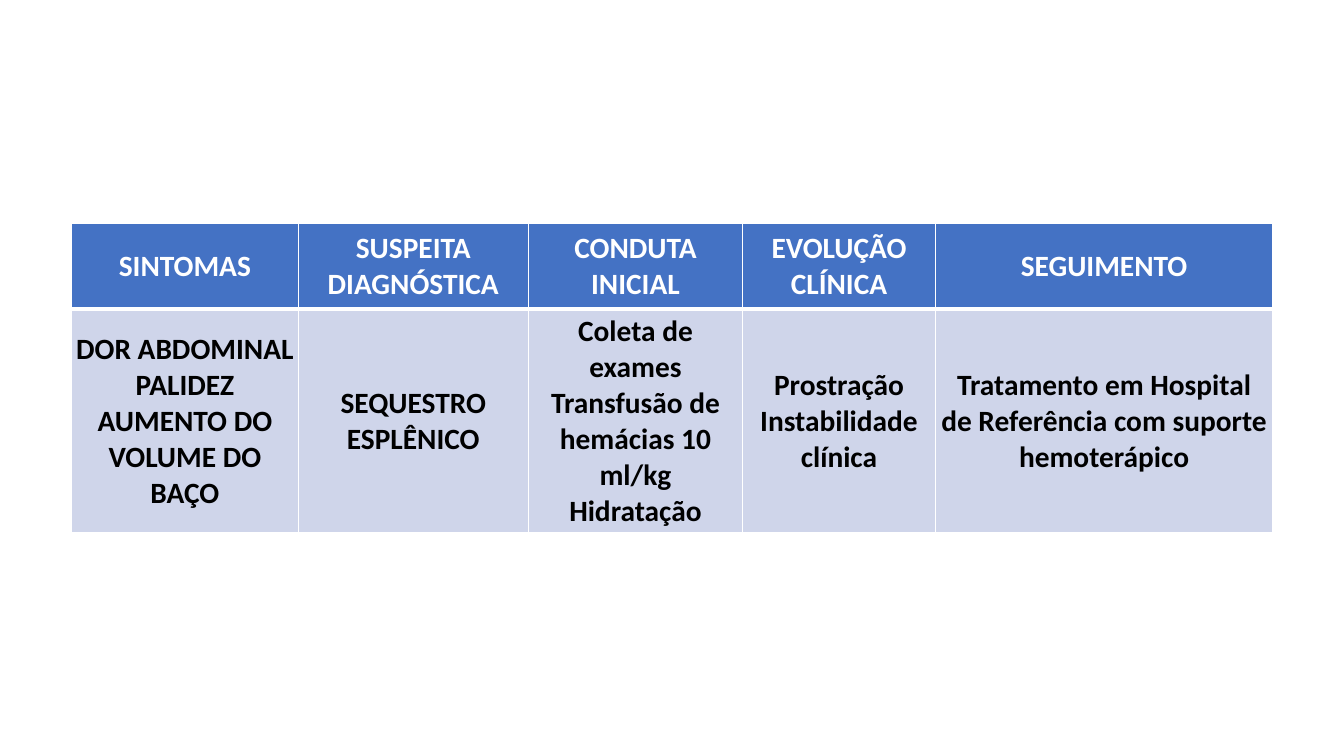
from lxml.etree import SubElement
from pptx import Presentation
from pptx.dml.color import RGBColor
from pptx.enum.text import MSO_ANCHOR, PP_ALIGN
from pptx.oxml.ns import qn
from pptx.util import Cm, Pt

COLUMN_WIDTHS = [5.72, 5.79, 5.41, 4.85, 8.51]
ROW_HEIGHTS = [2.16, 5.64]
HEADINGS = [
    "SINTOMAS",
    "SUSPEITA DIAGNÓSTICA",
    "CONDUTA INICIAL",
    "EVOLUÇÃO CLÍNICA",
    "SEGUIMENTO",
]
SPLENIC_SEQUESTRATION = [
    "DOR ABDOMINAL\nPALIDEZ\nAUMENTO DO VOLUME DO BAÇO",
    "SEQUESTRO ESPLÊNICO",
    "Coleta de exames\nTransfusão de hemácias 10 ml/kg\nHidratação",
    "Prostração\nInstabilidade clínica",
    "Tratamento em Hospital de Referência com suporte hemoterápico",
]


def color(value):
    """Return the colour for a hex string."""
    return RGBColor.from_string(value)


class SlideBuilder:
    """Hold the style and the current slide."""

    font = "Calibri"
    size = 21
    margin = 0.1
    white = "FFFFFF"
    black = "000000"
    header_fill = "4472C4"
    body_fill = "CFD5EA"

    def __init__(self, slide):
        """Keep the slide to draw on."""
        self.slide = slide

    def table(self, left, top, widths, heights, rows):
        """Add a table with a header row and body rows."""
        shape = self.slide.shapes.add_table(
            len(rows), len(widths), Cm(left), Cm(top),
            Cm(sum(widths)), Cm(sum(heights)))
        table = shape.table
        for column, width in zip(table.columns, widths):
            column.width = Cm(width)
        for row, height in zip(table.rows, heights):
            row.height = Cm(height)
        for row_index, texts in enumerate(rows):
            for column_index, text in enumerate(texts):
                self.cell(table.cell(row_index, column_index), text, row_index)

    def cell(self, cell, text, row_index):
        """Fill and format one table cell."""
        is_header = row_index == 0
        cell.fill.solid()
        cell.fill.fore_color.rgb = color(
            self.header_fill if is_header else self.body_fill)
        cell.vertical_anchor = MSO_ANCHOR.MIDDLE
        cell.margin_left = cell.margin_right = Cm(self.margin)
        cell.margin_top = cell.margin_bottom = Cm(self.margin)
        cell.text_frame.text = text
        for paragraph in cell.text_frame.paragraphs:
            paragraph.alignment = PP_ALIGN.CENTER
            for run in paragraph.runs:
                run.font.name = self.font
                run.font.size = Pt(self.size)
                run.font.bold = True
                run.font.color.rgb = color(
                    self.white if is_header else self.black)
        top, bottom = (1, 3) if is_header else (3 if row_index == 1 else 1, 1)
        self.borders(cell, {"L": 1, "R": 1, "T": top, "B": bottom})

    def borders(self, cell, widths):
        """Draw the white cell borders, with widths in points."""
        properties = cell._tc.get_or_add_tcPr()
        for position, (side, width) in enumerate(widths.items()):
            line = SubElement(properties, qn(f"a:ln{side}"), w=str(Pt(width)))
            fill = SubElement(line, qn("a:solidFill"))
            SubElement(fill, qn("a:srgbClr"), val=self.white)
            properties.insert(position, line)


def main():
    """Build and save the presentation."""
    presentation = Presentation()
    presentation.slide_width = Cm(33.87)
    presentation.slide_height = Cm(19.05)
    slide = presentation.slides.add_slide(presentation.slide_layouts[6])
    builder = SlideBuilder(slide)
    builder.table(1.8, 5.63, COLUMN_WIDTHS, ROW_HEIGHTS,
                  [HEADINGS, SPLENIC_SEQUESTRATION])
    presentation.save("out.pptx")


if __name__ == "__main__":
    main()
